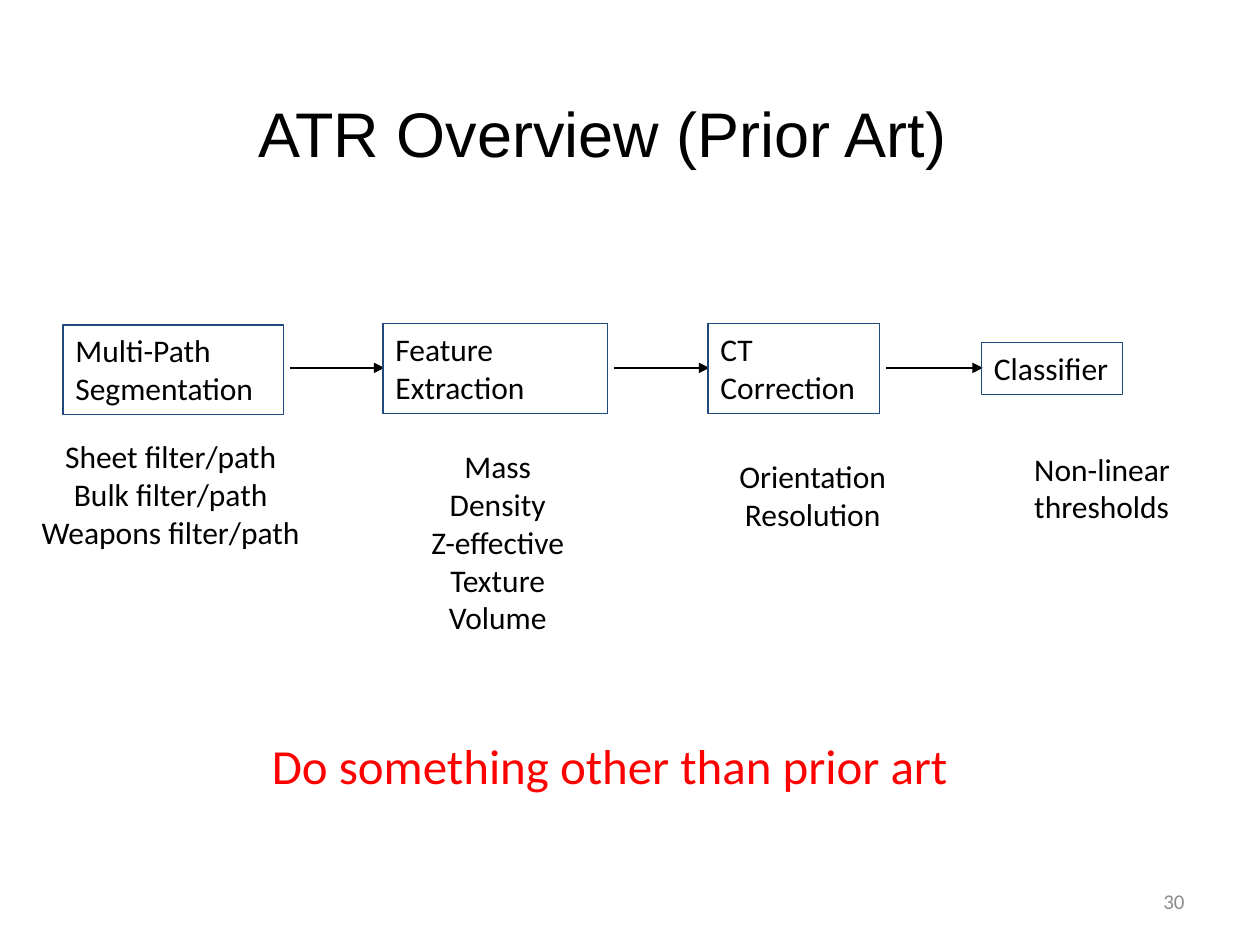
from pptx import Presentation
from pptx.dml.color import RGBColor
from pptx.enum.shapes import MSO_CONNECTOR as Connector, MSO_SHAPE as Shape
from pptx.enum.text import MSO_ANCHOR as Anchor, PP_ALIGN as Align
from pptx.oxml.ns import qn
from pptx.util import Inches, Pt
from lxml.etree import SubElement

ARROW_Y = 2.92

# Stage name lines, box, detail lines, detail box, detail alignment
STAGES = [
    (["Multi-Path", "Segmentation"], (0.5, 2.58, 1.75, 0.71),
     ["Sheet filter/path", "Bulk filter/path", "Weapons filter/path"],
     (0.22, 3.42, 2.27, 1.9), Align.CENTER),
    (["Feature", "Extraction"], (3.04, 2.57, 1.78, 0.71),
     ["Mass", "Density", "Z-effective", "Texture", "Volume"],
     (3.31, 3.5, 1.28, 2.2), Align.CENTER),
    (["CT", "Correction"], (5.62, 2.57, 1.36, 0.71),
     ["Orientation", "Resolution"],
     (5.76, 3.58, 1.38, 0.7), Align.CENTER),
    (["Classifier"], (7.79, 2.72, 1.12, 0.41),
     ["Non-linear", "thresholds"],
     (8.11, 3.52, 1.28, 0.7), Align.LEFT),
]


def color(hex_string):
    return RGBColor.from_string(hex_string)


def write(frame, lines, size=18, font="Calibri", ink="000000",
          align=Align.LEFT, anchor=Anchor.TOP, wrap=False):
    frame.word_wrap = wrap
    frame.vertical_anchor = anchor
    for index, line in enumerate(lines):
        paragraph = frame.add_paragraph() if index else frame.paragraphs[0]
        paragraph.text = line
        paragraph.alignment = align
        paragraph.font.size = Pt(size)
        paragraph.font.name = font
        paragraph.font.color.rgb = color(ink)


def add_label(slide, box, lines, **style):
    label = slide.shapes.add_textbox(*map(Inches, box))
    write(label.text_frame, lines, **style)


def add_stage(slide, box, name):
    stage = slide.shapes.add_shape(Shape.RECTANGLE, *map(Inches, box))
    stage.shadow.inherit = False
    stage.fill.background()
    stage.line.color.rgb = color("1F497D")
    stage.line.width = Pt(0.75)
    write(stage.text_frame, name)


def add_arrow(slide, start, end):
    arrow = slide.shapes.add_connector(
        Connector.STRAIGHT, Inches(start), Inches(ARROW_Y),
        Inches(end), Inches(ARROW_Y))
    arrow.line.color.rgb = color("000000")
    arrow.line.width = Pt(0.75)
    SubElement(arrow.line._get_or_add_ln(), qn("a:tailEnd"), type="triangle")
    SubElement(arrow._element.spPr, qn("a:effectLst"))


def add_pipeline(slide):
    previous_right = None
    for name, box, details, detail_box, align in STAGES:
        left, _, width, _ = box
        if previous_right is not None:
            add_arrow(slide, previous_right + 0.05, left + 0.01)
        add_stage(slide, box, name)
        add_label(slide, detail_box, details, align=align)
        previous_right = left + width


def main():
    deck = Presentation()
    deck.slide_width, deck.slide_height = Inches(10), Inches(7.5)
    slide = deck.slides.add_slide(deck.slide_layouts[6])

    # Title
    add_label(slide, (1.92, 0.7, 5.72, 0.71), ["ATR Overview (Prior Art)"],
              size=36, font="Arial", align=Align.CENTER)
    # Stages, arrows and details
    add_pipeline(slide)
    # Conclusion
    add_label(slide, (2.06, 5.79, 5.63, 0.57),
              ["Do something other than prior art"], size=28, ink="FF0000")
    # Page number
    add_label(slide, (7.17, 6.95, 2.33, 0.4), ["30"], size=12, ink="8C8C8C",
              align=Align.RIGHT, anchor=Anchor.MIDDLE, wrap=True)

    deck.save("out.pptx")


if __name__ == "__main__":
    main()
